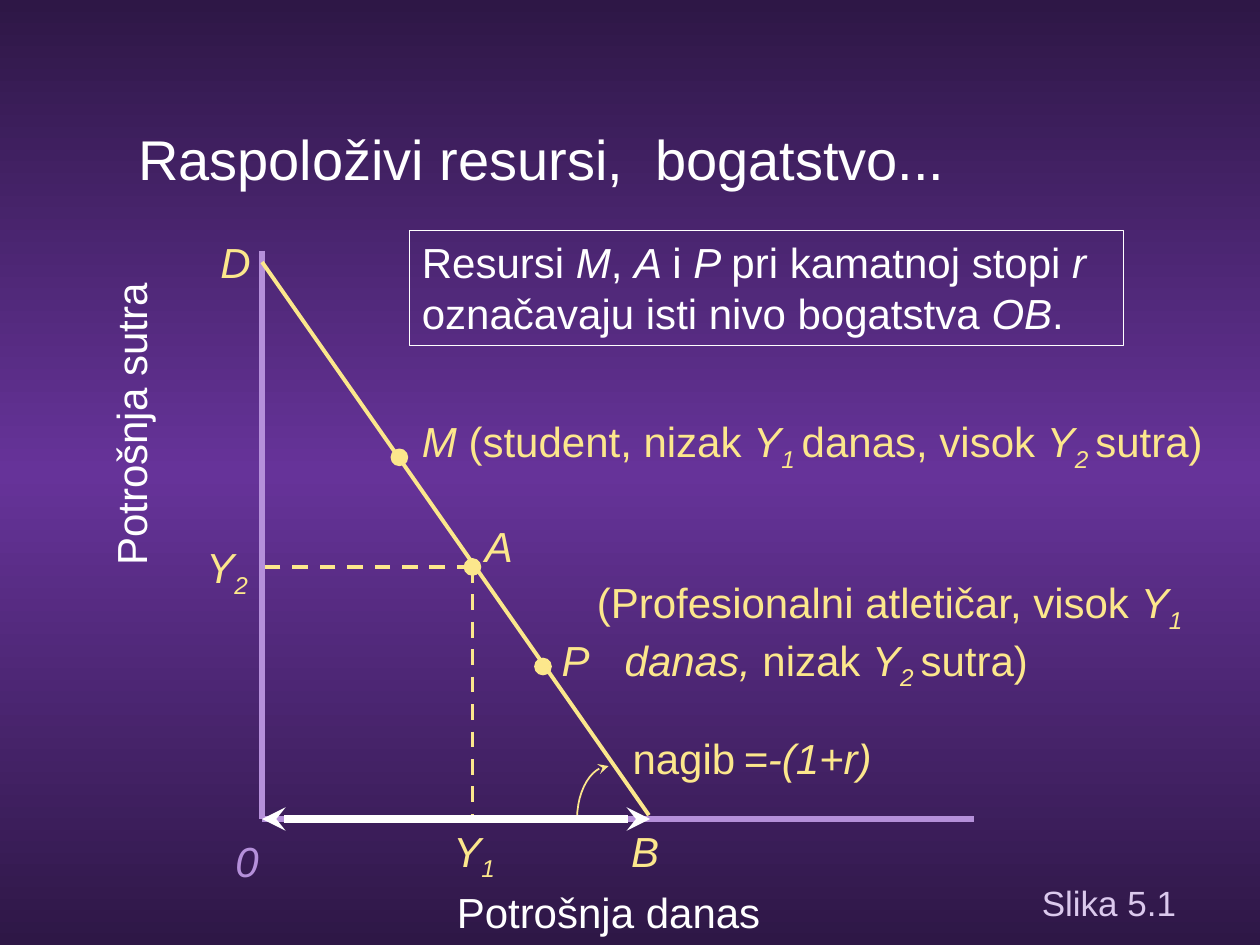
from lxml import etree
from copy import deepcopy
from pptx import Presentation
from pptx.dml.color import RGBColor
from pptx.enum.dml import MSO_LINE
from pptx.enum.shapes import MSO_CONNECTOR, MSO_SHAPE
from pptx.enum.text import MSO_ANCHOR, PP_ALIGN
from pptx.oxml.ns import qn
from pptx.util import Inches, Pt

STRAIGHT, OVAL, RECT = MSO_CONNECTOR.STRAIGHT, MSO_SHAPE.OVAL, MSO_SHAPE.RECTANGLE
DASH = MSO_LINE.DASH
LEFT, CENTER = PP_ALIGN.LEFT, PP_ALIGN.CENTER
TOP, MIDDLE = MSO_ANCHOR.TOP, MSO_ANCHOR.MIDDLE
WHITE, YELLOW, LILAC, PALE = "FFFFFF", "FCE78C", "B590DA", "DBC9ED"
DARK, VIOLET = "2E1746", "663399"
FONT = "Arial"


def rgb(color):
    return RGBColor.from_string(color)


def write(frame, runs, color=YELLOW, size=24, align=LEFT, anchor=TOP):
    """Fill a frame with (text, style) runs: i is italic, s is italic subscript."""
    frame.word_wrap = True
    frame.vertical_anchor = anchor
    paragraph = frame.paragraphs[0]
    paragraph.alignment = align
    font = paragraph.font
    font.name, font.size, font.color.rgb = FONT, Pt(size), rgb(color)
    for words, style in runs:
        if words == "\n":
            paragraph.add_line_break()
            continue
        run = paragraph.add_run()
        run.text = words
        run.font.name, run.font.size, run.font.color.rgb = FONT, Pt(size), rgb(color)
        run.font.italic = style in ("i", "s")
        if style == "s":
            run.font._element.set("baseline", "-25000")
    return paragraph


def text(slide, box, runs, margin=None, **style):
    holder = slide.shapes.add_textbox(*map(Inches, box))
    frame = holder.text_frame
    if margin is not None:
        frame.margin_left = frame.margin_right = Inches(margin)
        frame.margin_top = frame.margin_bottom = Inches(margin)
    write(frame, runs, **style)
    return holder


def arrowheads(shape, *ends):
    line = shape.line._get_or_add_ln()
    for end in ends:
        etree.SubElement(line, qn(f"a:{end}"), type="stealth")


def line(slide, start, end, color, width, dash=None):
    link = slide.shapes.add_connector(STRAIGHT, *map(Inches, (*start, *end)))
    link.line.color.rgb = rgb(color)
    link.line.width = Pt(width)
    if dash:
        link.line.dash_style = dash
    etree.SubElement(link._element.spPr, qn("a:effectLst"))
    return link


def dot(slide, x, y, size=0.13):
    mark = slide.shapes.add_shape(
        OVAL, Inches(x - size / 2), Inches(y - size / 2), Inches(size), Inches(size))
    mark.shadow.inherit = False
    mark.fill.solid()
    mark.fill.fore_color.rgb = mark.line.color.rgb = rgb(YELLOW)
    mark.line.width = Pt(0.75)


def background(slide):
    fill = slide.background.fill
    fill.gradient()
    fill.gradient_angle = 90
    stops = slide.element.find(".//" + qn("a:gsLst"))
    stops.insert(1, deepcopy(stops[0]))
    for stop, color, position in zip(fill.gradient_stops, (DARK, VIOLET, DARK), (0, 0.5, 1)):
        stop.color.rgb = rgb(color)
        stop.position = position


def heading(slide, box):
    left, top, width, height = box
    for words, x, w in (("Raspoloživi resursi,", 0, 4.09), ("bogatstvo...", width - 3.96, 3.96)):
        text(slide, (left + x, top, w, height), [(words, "")],
             color=WHITE, size=32, align=CENTER, anchor=MIDDLE)


def axes(slide, box):
    left, top, width, height = box
    bottom = top + height
    line(slide, (left, top), (left, bottom), LILAC, 3)
    line(slide, (left, bottom), (left + width, bottom), LILAC, 3)
    text(slide, (left + 1, bottom + 0.49, 3.5, 0.5), [("Potrošnja danas", "")],
         color=WHITE, align=CENTER)
    tomorrow = text(slide, (left - 3, top + 1.13, 3.91, 0.5), [("Potrošnja sutra", "")],
                    color=WHITE, align=CENTER)
    tomorrow.rotation = 270
    text(slide, (left - 0.41, bottom + 0.08, 0.58, 0.5), [("0", "i")],
         color=LILAC, align=CENTER)


def slope_arc(slide, left, top, width, height):
    # Cubic curve from the arrow tip down to the horizontal axis
    ends = ((width, 0), (width * 0.48, 0), (0, height * 0.44), (0, height))
    points = []
    for step in range(13):
        t = step / 12
        weights = ((1 - t) ** 3, 3 * t * (1 - t) ** 2, 3 * t ** 2 * (1 - t), t ** 3)
        points.append(tuple(
            Inches(corner + sum(w * p[axis] for w, p in zip(weights, ends)))
            for axis, corner in enumerate((left, top))))
    builder = slide.shapes.build_freeform(*points[0])
    builder.add_line_segments(points[1:], close=False)
    arc = builder.convert_to_shape()
    arc.shadow.inherit = False
    arc.fill.background()
    arc.line.color.rgb = rgb(YELLOW)
    arc.line.width = Pt(1)
    arrowheads(arc, "headEnd")


def budget_line(slide, box):
    left, top, width, height = box
    bottom = top + height
    slope_arc(slide, left + 2.5, bottom - 0.42, 0.25, 0.42)

    # Income coordinates of A
    a_x, a_y = left + 1.67, top + 2.51
    line(slide, (a_x, a_y), (left, a_y), YELLOW, 2.25, DASH)
    line(slide, (a_x, a_y), (a_x, bottom), YELLOW, 2.25, DASH)
    text(slide, (a_x - 0.25, bottom, 0.63, 0.5), [("Y", "i"), ("1", "s")])
    text(slide, (left - 0.54, a_y - 0.25, 0.63, 0.5), [("Y", "i"), ("2", "s")])

    # Wealth OB and the line DB
    wealth = line(slide, (left, bottom), (left + 3.08, bottom), WHITE, 4.5)
    arrowheads(wealth, "headEnd", "tailEnd")
    line(slide, (left + 3.07, bottom - 0.03), (left, top + 0.09), YELLOW, 2.25)

    # Letters and slope
    for letter, x, y in (("A", left + 1.59, top + 2.09),
                         ("D", left - 0.5, top - 0.16),
                         ("B", left + 2.75, bottom)):
        text(slide, (x, y, 0.58, 0.5), [(letter, "i")], align=CENTER)
    for words, style, x, w in (("nagib", "", 2.94, 0.85), ("=-(1+r)", "i", 3.82, 1.2)):
        text(slide, (left + x, bottom - 0.69, w, 0.4), [(words, style)], margin=0)


def resource_points(slide, box):
    left, top = box[:2]
    for x, y in ((1.09, 1.64), (1.67, 2.51), (2.23, 3.3)):
        dot(slide, left + x, top + y)
    text(slide, (left + 1.17, top + 1.26, 6.75, 0.5), [
        ("M ", "i"), ("(student, nizak ", ""), ("Y", "i"), ("1 ", "s"),
        ("danas, visok ", ""), ("Y", "i"), ("2 ", "s"), ("sutra)", "")])

    # First line is indented, second starts with the letter P and a tab
    athlete = text(slide, (left + 2.28, top + 2.54, 5.64, 0.9), [
        ("(Profesionalni atletičar, visok ", ""), ("Y", "i"), ("1", "s"), ("\n", ""),
        ("P\tdanas, ", "i"), ("nizak ", ""), ("Y", "i"), ("2 ", "s"), ("sutra)", "")])
    props = athlete.text_frame.paragraphs[0]._p.get_or_add_pPr()
    props.set("marL", "0")
    props.set("indent", str(Inches(0.28)))
    tabs = etree.Element(qn("a:tabLst"))
    etree.SubElement(tabs, qn("a:tab"), pos=str(Inches(1.14)), algn="l")
    props.find(qn("a:defRPr")).addprevious(tabs)


def message(slide, box):
    frame = slide.shapes.add_shape(RECT, *map(Inches, box))
    frame.shadow.inherit = False
    frame.fill.background()
    frame.line.color.rgb = rgb(WHITE)
    frame.line.width = Pt(0.75)
    write(frame.text_frame, [
        ("Resursi ", ""), ("M", "i"), (", ", ""), ("A ", "i"), ("i ", ""), ("P ", "i"),
        ("pri kamatnoj stopi ", ""), ("r ", "i"),
        ("označavaju isti nivo bogatstva ", ""), ("OB", "i"), (".", "")], color=WHITE)


def main():
    deck = Presentation()
    deck.slide_width, deck.slide_height = Inches(10), Inches(7.5)
    slide = deck.slides.add_slide(deck.slide_layouts[6])
    plot = (2.08, 1.99, 5.65, 4.51)
    background(slide)
    heading(slide, (0.98, 0.92, 7.35, 0.67))
    axes(slide, plot)
    budget_line(slide, plot)
    resource_points(slide, plot)
    message(slide, (3.25, 1.83, 5.67, 0.91))
    text(slide, (8.17, 6.83, 1.83, 0.67), [("Slika 5.1", "")],
         color=PALE, size=20, anchor=MIDDLE)
    deck.save("out.pptx")


if __name__ == "__main__":
    main()
